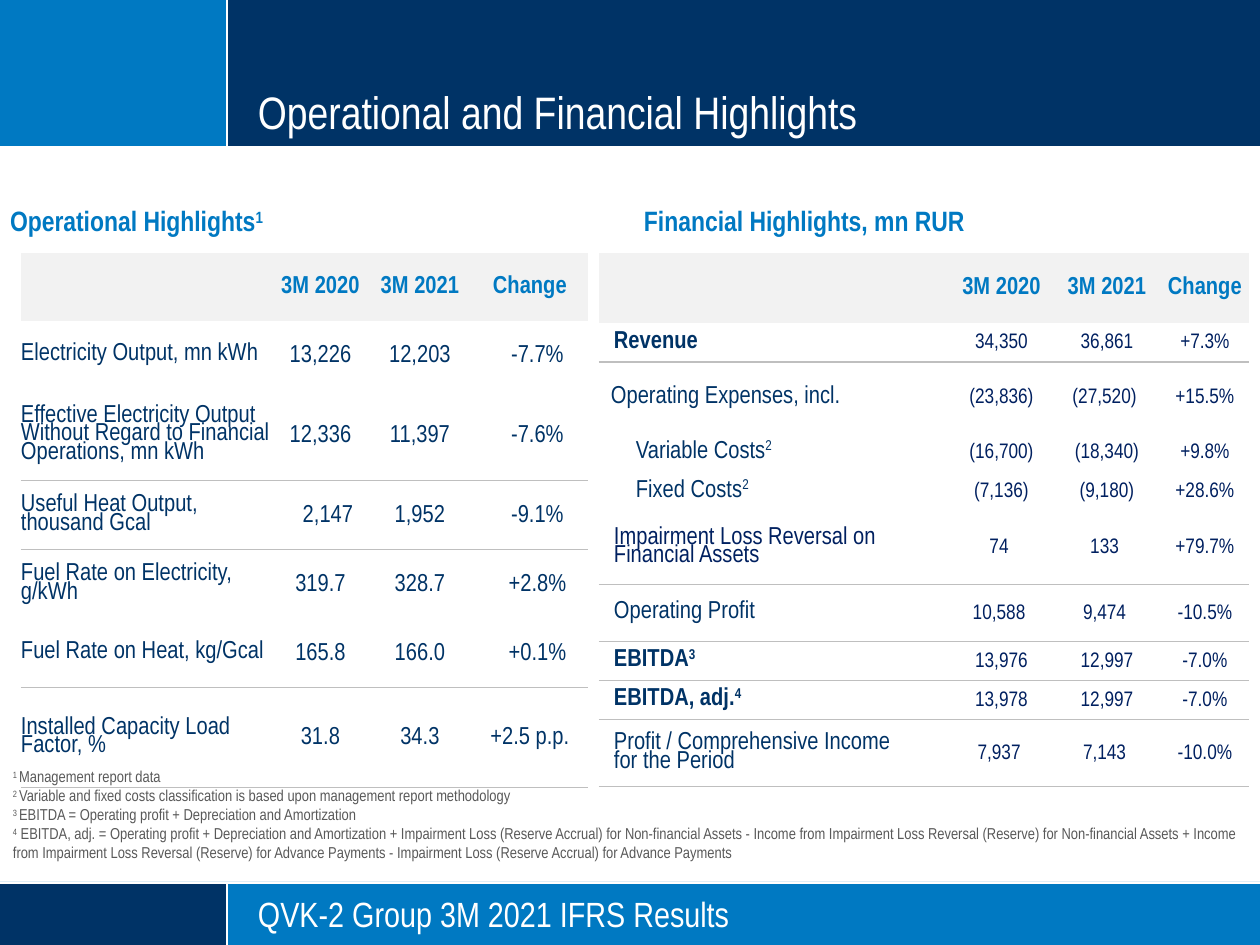
import pptx
import pptx.dml.color
import pptx.enum.shapes
import pptx.enum.text
import pptx.oxml
import pptx.oxml.ns
import pptx.util

PX = 914400 // 126
FONT = "Arial Narrow"
NAVY, BLUE, INK, WHITE = "003366", "0079C2", "002060", "FFFFFF"
GREY, RULE, NOTE = "F2F2F2", "BFBFBF", "595959"
CENTER = pptx.enum.text.PP_ALIGN.CENTER
TOP, MIDDLE, BOTTOM = (pptx.enum.text.MSO_ANCHOR.TOP,
                       pptx.enum.text.MSO_ANCHOR.MIDDLE,
                       pptx.enum.text.MSO_ANCHOR.BOTTOM)

# Text between bars is superscript.
HEADER = ["", "3М 2020", "3М 2021", "Change"]
BANDS = [  # x, y, width, height, colour
    (0, 0, 1260, 148, NAVY), (0, 882, 1260, 63, BLUE),
    (0, 883, 227, 62, NAVY), (0, 0, 227, 148, BLUE),
]
DIVIDERS = [(0, 147, 1260, 147), (227, 882, 227, 945),
            (0, 883, 1260, 883), (227, 0, 227, 147)]
TEXTS = [  # text, box, size, colour, bold, anchor
    ("Operational and Financial Highlights", (258, 0, 971, 139), 26, WHITE, False, BOTTOM),
    ("QVK-2 Group 3M 2021 IFRS Results", (258, 892, 971, 43), 20, WHITE, False, MIDDLE),
    ("Operational Highlights|1|", (10, 204, 257, 34), 16, BLUE, True, TOP),
    ("Financial Highlights, mn RUR", (644, 204, 522, 34), 16, BLUE, True, TOP),
]
FOOTNOTES = "\n".join([
    "|1 |Management report data",
    "|2 |Variable and fixed costs classification is based upon management report methodology",
    "|3 |EBITDA = Operating profit + Depreciation and Amortization",
    "|4| EBITDA, adj. = Operating profit + Depreciation and Amortization + Impairment Loss "
    "(Reserve Accrual) for Non-financial Assets - Income from Impairment Loss Reversal "
    "(Reserve) for Non-financial Assets + Income from Impairment Loss Reversal (Reserve) "
    "for Advance Payments - Impairment Loss (Reserve Accrual) for Advance Payments",
])

OPERATIONAL = {
    "at": (21, 253), "cols": [252, 95, 104, 116], "header": 68,
    "size": 14, "ink": NAVY,
    "rows": [  # height, rule below, label, values
        (69, False, "Electricity Output, mn kWh", ["13,226", "12,203", "-7.7%"]),
        (91, True, "Effective Electricity Output Without Regard to Financial Operations, mn kWh",
         ["12,336", "11,397", "-7.6%"]),
        (69, True, "Useful Heat Output, thousand Gcal", ["2,147", "1,952", "-9.1%"]),
        (69, False, "Fuel Rate on Electricity, g/kWh", ["319.7", "328.7", "+2.8%"]),
        (69, True, "Fuel Rate on Heat, kg/Gcal", ["165.8", "166.0", "+0.1%"]),
        (100, True, "Installed Capacity Load Factor, %", ["31.8", "34.3", "+2.5 p.p."]),
    ],
    "label_left": {}, "default_left": 0, "bold": (), "label_ink": {},
    "indented": ("2,147", "-7.7%", "-7.6%", "-9.1%", "+2.8%", "+0.1%"),
}
FINANCIAL = {
    "at": (599, 253), "cols": [351, 103, 108, 88], "header": 70,
    "size": 12, "ink": INK,
    "rows": [
        (39, True, "Revenue", ["34,350", "36,861", "+7.3%"]),
        (71, False, "Operating Expenses, incl.", ["(23,836)", "(27,520) ", "+15.5%"]),
        (39, False, "Variable Costs|2|", ["(16,700)", "(18,340)", "+9.8%"]),
        (39, False, "Fixed Costs|2|", ["(7,136)", "(9,180)", "+28.6%"]),
        (74, True, "Impairment Loss Reversal on Financial Assets", ["74 ", "133 ", "+79.7%"]),
        (57, True, "Operating Profit", ["10,588 ", "9,474 ", "-10.5%"]),
        (39, True, "EBITDA|3|", ["13,976", "12,997", "-7.0%"]),
        (39, True, "EBITDA, adj.|4|", ["13,978", "12,997", "-7.0%"]),
        (67, True, "Profit / Comprehensive Income\nfor the Period", ["7,937 ", "7,143 ", "-10.0%"]),
    ],
    "label_left": {"Operating Expenses, incl.": 12, "Variable Costs|2|": 37, "Fixed Costs|2|": 37},
    "default_left": 15,
    "bold": ("Revenue", "EBITDA|3|", "EBITDA, adj.|4|"),
    "label_ink": {"Impairment Loss Reversal on Financial Assets": INK},
    "indented": (),
}


def rgb(color):
    return pptx.dml.color.RGBColor.from_string(color)


def emu(*lengths):
    return [n * PX for n in lengths]


def write(tf, text, size, color, bold=False, align=None, spacing=None):
    """Fill a text frame: one paragraph a line, superscript between bars."""
    for i, line in enumerate(text.split("\n")):
        p = tf.add_paragraph() if i else tf.paragraphs[0]
        p.alignment, p.line_spacing = align, spacing
        p.font.name, p.font.size, p.font.bold = FONT, pptx.util.Pt(size), bold
        p.font.color.rgb = rgb(color)
        for j, piece in enumerate(line.split("|")):
            if piece:
                r = p.add_run()
                r.text = piece
                if j % 2:
                    r._r.get_or_add_rPr().set("baseline", "30000")


def set_margins(target, left, top, right, bottom):
    (target.margin_left, target.margin_top,
     target.margin_right, target.margin_bottom) = emu(left, top, right, bottom)


def add_text(slide, text, box, size, color, bold, anchor, margins=(0, 0, 0, 0)):
    tf = slide.shapes.add_textbox(*emu(*box)).text_frame
    tf.word_wrap, tf.vertical_anchor = True, anchor
    set_margins(tf, *margins)
    write(tf, text, size, color, bold)


def set_borders(cell, above, below):
    """Draw the wanted horizontal rules and hide every other edge."""
    tcPr = cell._tc.get_or_add_tcPr()
    edges = {"lnL": False, "lnR": False, "lnT": above, "lnB": below}
    for i, (tag, shown) in enumerate(edges.items()):
        paint = f'<a:solidFill><a:srgbClr val="{RULE}"/></a:solidFill>' if shown else "<a:noFill/>"
        tcPr.insert(i, pptx.oxml.parse_xml(
            f'<a:{tag} {pptx.oxml.ns.nsdecls("a")} w="9525">{paint}</a:{tag}>'))


def add_highlights(slide, data):
    heights = [data["header"]] + [row[0] for row in data["rows"]]
    rules = [False] + [row[1] for row in data["rows"]]
    size = (sum(data["cols"]), sum(heights))
    table = slide.shapes.add_table(len(heights), len(HEADER), *emu(*data["at"], *size)).table
    table.first_row = table.horz_banding = False
    for col, width in zip(table.columns, data["cols"]):
        col.width = width * PX
    for row, height in zip(table.rows, heights):
        row.height = height * PX

    lines = [HEADER] + [[label] + values for _, _, label, values in data["rows"]]
    for i, line in enumerate(lines):
        for j, text in enumerate(line):
            cell = table.cell(i, j)
            cell.vertical_anchor = MIDDLE
            if i == 0:
                cell.fill.solid()
                cell.fill.fore_color.rgb = rgb(GREY)
                set_margins(cell, 6, 4, 6, 4)
                write(cell.text_frame, text, 14, BLUE, True, CENTER)
            else:
                cell.fill.background()
                if j == 0:
                    set_margins(cell, data["label_left"].get(text, data["default_left"]), 0, 0, 0)
                    write(cell.text_frame, text, 14, data["label_ink"].get(text, NAVY),
                          text in data["bold"], spacing=0.8)
                else:
                    set_margins(cell, 16 if text in data["indented"] else 1, 1, 1, 0)
                    write(cell.text_frame, text, data["size"], data["ink"], align=CENTER)
            set_borders(cell, i > 0 and rules[i - 1], rules[i])


def main():
    prs = pptx.Presentation()
    prs.slide_width, prs.slide_height = emu(1260, 945)
    slide = prs.slides.add_slide(prs.slide_layouts[6])

    for *box, color in BANDS:
        sp = slide.shapes.add_shape(pptx.enum.shapes.MSO_SHAPE.RECTANGLE, *emu(*box))
        sp.shadow.inherit = False
        sp.fill.solid()
        sp.fill.fore_color.rgb = rgb(color)
        sp.line.fill.background()
    for ends in DIVIDERS:
        line = slide.shapes.add_connector(pptx.enum.shapes.MSO_CONNECTOR.STRAIGHT, *emu(*ends))
        line.line.color.rgb = rgb(WHITE)
        line.line.width = pptx.util.Pt(1.25)
        line._element.spPr.append(pptx.oxml.parse_xml(
            f'<a:effectLst {pptx.oxml.ns.nsdecls("a")}/>'))
    for text in TEXTS:
        add_text(slide, *text)
    add_highlights(slide, OPERATIONAL)
    add_text(slide, FOOTNOTES, (0, 760, 1260, 108), 9, NOTE, False, BOTTOM, (13, 6, 13, 6))
    add_highlights(slide, FINANCIAL)
    prs.save("out.pptx")


if __name__ == "__main__":
    main()
